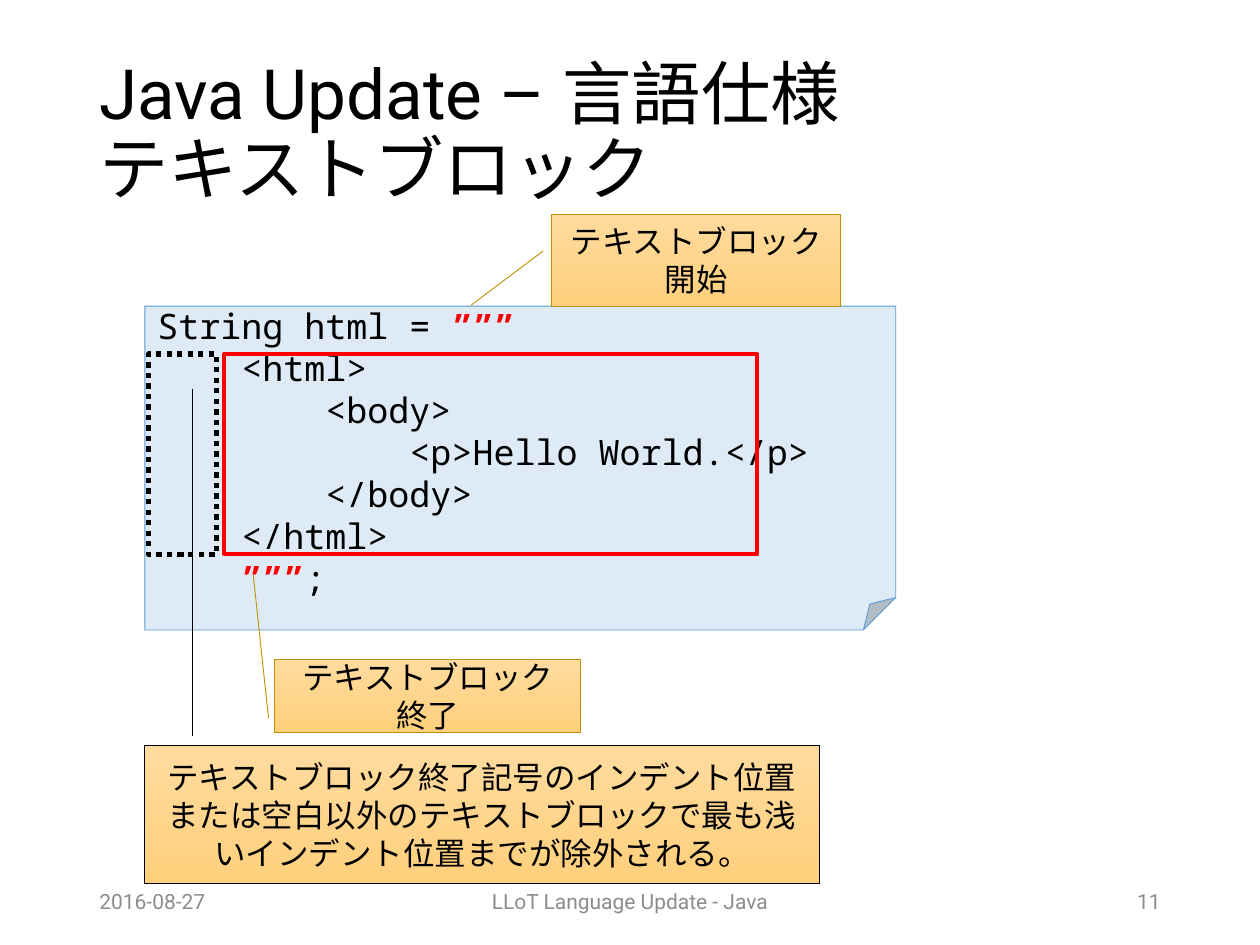
from collections import namedtuple

from lxml import etree
from pptx import Presentation
from pptx.dml.color import RGBColor
from pptx.enum.dml import MSO_LINE
from pptx.enum.shapes import MSO_SHAPE
from pptx.enum.text import MSO_ANCHOR, PP_ALIGN
from pptx.oxml.ns import qn
from pptx.util import Inches, Pt

FOLDED_CORNER = MSO_SHAPE.FOLDED_CORNER
CALLOUT = MSO_SHAPE.LINE_CALLOUT_1
RECTANGLE = MSO_SHAPE.RECTANGLE
DOTTED = MSO_LINE.ROUND_DOT
MIDDLE = MSO_ANCHOR.MIDDLE
LEFT, CENTER, RIGHT = PP_ALIGN.LEFT, PP_ALIGN.CENTER, PP_ALIGN.RIGHT

BLACK = RGBColor(0x00, 0x00, 0x00)
RED = RGBColor(0xFF, 0x00, 0x00)
GRAY = RGBColor(0x8C, 0x8C, 0x8C)
BLUE = RGBColor(0x5B, 0x9B, 0xD5)
PALE_BLUE = RGBColor(0xDE, 0xEB, 0xF7)
GOLD = RGBColor(0xBF, 0x90, 0x00)
LIGHT_ORANGE = RGBColor(0xFF, 0xDB, 0x9E)
ORANGE = RGBColor(0xFF, 0xD0, 0x7C)

BODY_FONT = "Roboto"
CODE_FONT = "Noto Sans Mono"
GRID_UNIT = Inches(0.1)
COLUMNS, ROWS = 100, 75
DELIMITER = "”””"
CODE_LINES = [
    "String html = ”””",
    "    <html>",
    "        <body>",
    "            <p>Hello World.</p>",
    "        </body>",
    "    </html>",
    "    ”””;",
]

Box = namedtuple("Box", "column row columns rows")


def place(box):
    """Return the left, top, width and height of a grid box."""
    return [round(length * GRID_UNIT) for length in box]


def inside(box, column, row, columns, rows):
    """Return a box whose column and row are counted from another box."""
    return Box(box.column + column, box.row + row, columns, rows)


def write(shape, lines, size, color=BLACK, font=BODY_FONT, align=LEFT,
          spacing=None, highlight=None):
    """Write one paragraph per line, with the highlighted part bold and red."""
    frame = shape.text_frame
    frame.word_wrap = True
    frame.vertical_anchor = MIDDLE
    for index, line in enumerate(lines):
        paragraph = frame.add_paragraph() if index else frame.paragraphs[0]
        paragraph.alignment = align
        if spacing:
            paragraph.line_spacing = spacing
        if highlight is None:
            paragraph.text = line
        else:
            for part in filter(None, line.partition(highlight)):
                run = paragraph.add_run()
                run.text = part
        for run in paragraph.runs:
            marked = run.text == highlight
            run.font.name = font
            run.font.size = Pt(size)
            run.font.bold = marked
            run.font.color.rgb = RED if marked else color


def adjust(shape, **adjustments):
    """Set the named adjustments of a preset shape as shares of its size."""
    guides = next(shape.element.iter(qn("a:avLst")))
    guides.clear()
    for name, share in adjustments.items():
        etree.SubElement(guides, qn("a:gd"), name=name,
                         fmla=f"val {round(share * 100000)}")


def add_outline(slide, kind, box, color, width):
    """Add an unfilled preset shape with a coloured line."""
    shape = slide.shapes.add_shape(kind, *place(box))
    shape.shadow.inherit = False
    shape.fill.background()
    shape.line.color.rgb = color
    shape.line.width = Pt(width)
    return shape


def add_label(slide, box, text, size, **text_format):
    """Add a text box with one paragraph."""
    label = slide.shapes.add_textbox(*place(box))
    write(label, [text], size, **text_format)


def add_code_panel(slide, box):
    """Add the folded sheet with the code."""
    sheet = add_outline(slide, FOLDED_CORNER, box, BLUE, 0.5)
    adjust(sheet, adj=0.1)
    sheet.fill.solid()
    sheet.fill.fore_color.rgb = PALE_BLUE
    write(sheet, CODE_LINES, 20, font=CODE_FONT, highlight=DELIMITER)


def add_content_frame(slide, panel):
    """Frame the content of the text block on the code panel."""
    add_outline(slide, RECTANGLE, inside(panel, 6.3, 3.8, 42.3, 15.9), RED, 2.25)


def add_indent_frame(slide, panel):
    """Frame the removed indent on the code panel."""
    frame = add_outline(slide, RECTANGLE, inside(panel, 0.3, 3.8, 5.4, 15.9), BLACK, 3)
    frame.line.dash_style = DOTTED


def add_callout(slide, box, text, start, end, color=GOLD):
    """Add an orange callout with a pointer between two (x, y) shares of its box."""
    callout = add_outline(slide, CALLOUT, box, color, 0.5)
    adjust(callout, adj1=start[1], adj2=start[0], adj3=end[1], adj4=end[0])
    callout.fill.gradient()
    callout.fill.gradient_angle = 270
    for stop, stop_color in zip(callout.fill.gradient_stops, (LIGHT_ORANGE, ORANGE)):
        stop.color.rgb = stop_color
    write(callout, [text], 18, align=CENTER)


def add_footer(slide, box):
    """Add the date, the talk name and the slide number."""
    side, middle = 22.5, 33.8
    entries = [
        ("2016-08-27", 0, side, LEFT),
        ("LLoT Language Update - Java", (box.columns - middle) / 2, middle, CENTER),
        ("11", box.columns - side, side, RIGHT),
    ]
    for text, column, columns, align in entries:
        add_label(slide, inside(box, column, 0, columns, box.rows), text, 12,
                  color=GRAY, align=align)


def main():
    """Build and save the slide."""
    presentation = Presentation()
    presentation.slide_width = COLUMNS * GRID_UNIT
    presentation.slide_height = ROWS * GRID_UNIT
    slide = presentation.slides.add_slide(presentation.slide_layouts[6])
    panel = Box(11.5, 24.3, 59.6, 25.7)

    add_label(slide, Box(6.9, 4, 86.2, 13.4),
              "Java Update – 言語仕様\vテキストブロック", 39.6, spacing=0.9)
    add_footer(slide, Box(6.9, 69.5, 86.2, 4))
    add_code_panel(slide, panel)
    add_callout(slide, Box(43.8, 17, 22.9, 7.3), "テキストブロック開始",
                start=(-0.03, 0.4), end=(-0.28, 0.99))
    add_callout(slide, Box(21.8, 52.3, 24.3, 5.8), "テキストブロック終了",
                start=(-0.02, 0.81), end=(-0.07, -1.16))
    add_content_frame(slide, panel)
    add_callout(slide, Box(11.5, 59.2, 53.5, 10.9),
                "テキストブロック終了記号のインデント位置または空白以外の"
                "テキストブロックで最も浅いインデント位置までが除外される。",
                start=(0.07, -0.07), end=(0.07, -2.6), color=BLACK)
    add_indent_frame(slide, panel)
    presentation.save("out.pptx")


if __name__ == "__main__":
    main()
